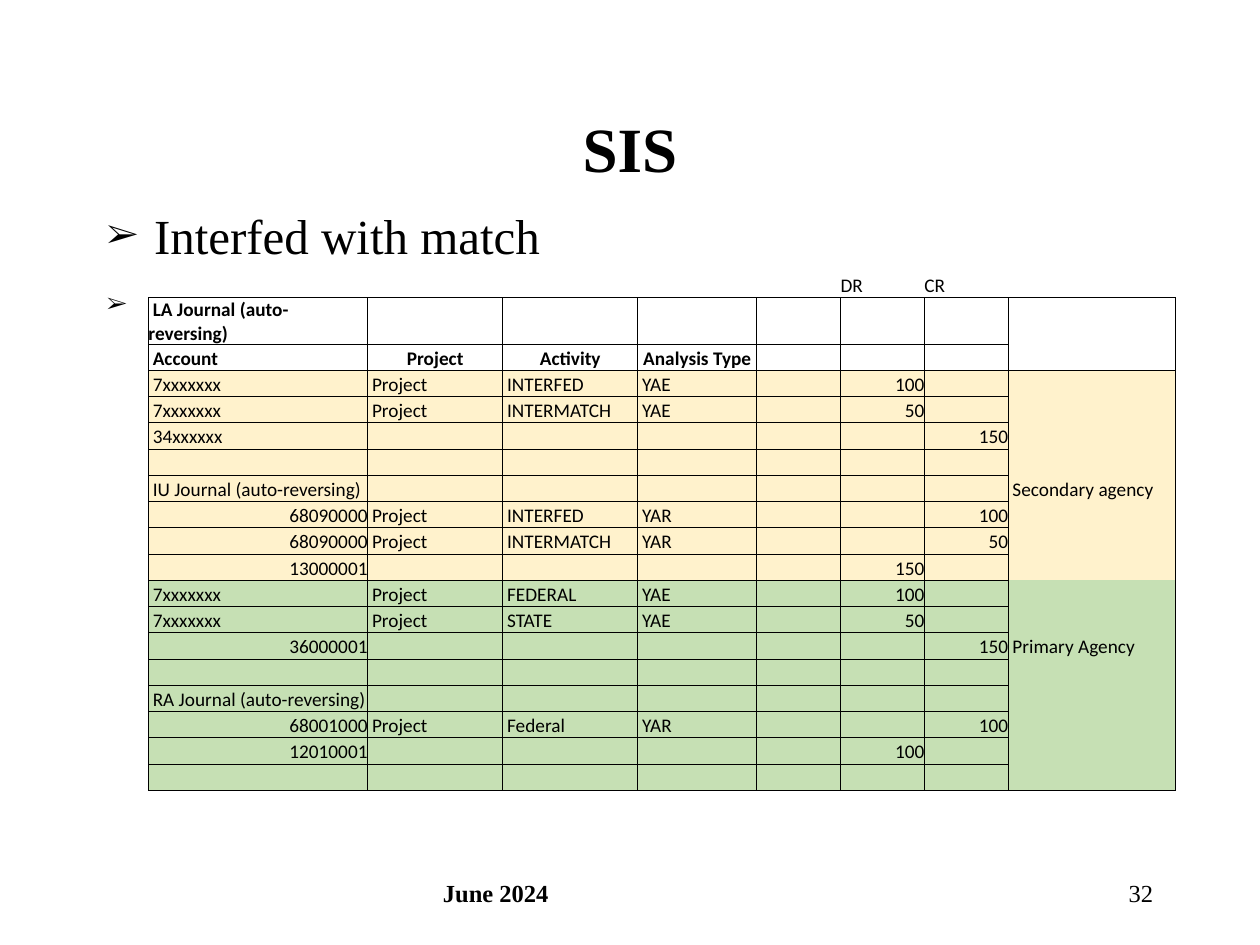
import dataclasses

import lxml.etree
import pptx
import pptx.dml.color
import pptx.enum.text
import pptx.oxml.ns
import pptx.util

Pt = pptx.util.Pt
RGB = pptx.dml.color.RGBColor
qn = pptx.oxml.ns.qn
ALIGN = pptx.enum.text.PP_ALIGN
ANCHOR = pptx.enum.text.MSO_ANCHOR


@dataclasses.dataclass(frozen=True)
class Theme:
    ink: str = "000000"
    secondary: str = "FFF2CC"
    primary: str = "C6E0B4"
    serif: str = "Times New Roman"
    sans: str = "Calibri"
    title: float = 36
    body: float = 28
    spacer: float = 18
    footer: float = 14
    cell: float = 11
    border: float = 0.5


THEME = Theme()

COLUMNS = [125.3, 77.2, 77.2, 68] + [47.9] * 5
ROW_HEIGHT = 15
SIDE = 7
HEADER_ROW = 2
FIRST_SECONDARY, FIRST_PRIMARY = 3, 11
SIDE_LABELS = {7: "Secondary agency", 13: "Primary Agency"}
MERGED_ROWS = (6, 7, 13, 14, 15)

ROWS = [
    ("", "", "", "", "DR", "CR"),
    ("LA Journal (auto-reversing)", "", "", "", "", ""),
    ("Account", "Project", "Activity", "Analysis Type", "", ""),
    ("7xxxxxxx", "Project", "INTERFED", "YAE", "100", ""),
    ("7xxxxxxx", "Project", "INTERMATCH", "YAE", "50", ""),
    ("34xxxxxx", "", "", "", "", "150"),
    ("", "", "", "", "", ""),
    ("IU Journal (auto-reversing)", "", "", "", "", ""),
    ("68090000", "Project", "INTERFED", "YAR", "", "100"),
    ("68090000", "Project", "INTERMATCH", "YAR", "", "50"),
    ("13000001", "", "", "", "150", ""),
    ("7xxxxxxx", "Project", "FEDERAL", "YAE", "100", ""),
    ("7xxxxxxx", "Project", "STATE", "YAE", "50", ""),
    ("36000001", "", "", "", "", "150"),
    ("", "", "", "", "", ""),
    ("RA Journal (auto-reversing)", "", "", "", "", ""),
    ("68001000", "Project", "Federal", "YAR", "", "100"),
    ("12010001", "", "", "", "100", ""),
    ("", "", "", "", "", ""),
]


def write(p, text, size, font=THEME.serif, bold=False, align=ALIGN.LEFT):
    p.alignment = align
    r = p.add_run()
    r.text = text
    r.font.size = Pt(size)
    r.font.name = font
    r.font.bold = bold
    r.font.color.rgb = RGB.from_string(THEME.ink)


def add_box(s, left, top, width, height, anchor=ANCHOR.MIDDLE):
    sp = s.shapes.add_textbox(Pt(left), Pt(top), Pt(width), Pt(height))
    tf = sp.text_frame
    tf.word_wrap = True
    tf.vertical_anchor = anchor
    return tf


def add_bullet(p):
    pPr = p._p.get_or_add_pPr()
    pPr.set("marL", str(Pt(27)))
    pPr.set("indent", str(-Pt(27)))
    clr = lxml.etree.SubElement(pPr, qn("a:buClr"))
    lxml.etree.SubElement(clr, qn("a:srgbClr"), val=THEME.ink)
    lxml.etree.SubElement(pPr, qn("a:buSzPct"), val="70000")
    lxml.etree.SubElement(pPr, qn("a:buFont"), typeface=THEME.serif)
    lxml.etree.SubElement(pPr, qn("a:buChar"), char="➢")


def add_body(s):
    tf = add_box(s, 54, 114, 612, 378, ANCHOR.TOP)
    p = tf.paragraphs[0]
    add_bullet(p)
    write(p, "Interfed with match", THEME.body)
    p = tf.add_paragraph()
    p.space_before = Pt(5.6)
    add_bullet(p)
    write(p, " ", THEME.spacer, font=THEME.sans)
    write(p, " ", THEME.body)


def cell_sides(row, col):
    if row == 0:
        return "B"
    if col < SIDE:
        return "LRTB"
    sides = "L" if col == SIDE else "R"
    if row in MERGED_ROWS:
        sides = "LR"
    if row in (1, FIRST_SECONDARY):
        sides += "T"
    if row in (HEADER_ROW, len(ROWS) - 1):
        sides += "B"
    return sides


def draw_borders(cell, sides):
    tcPr = cell._tc.get_or_add_tcPr()
    for side in "LRTB":
        ln = lxml.etree.SubElement(tcPr, qn(f"a:ln{side}"), w=str(Pt(THEME.border)))
        if side in sides:
            fill = lxml.etree.SubElement(ln, qn("a:solidFill"))
            lxml.etree.SubElement(fill, qn("a:srgbClr"), val=THEME.ink)
        else:
            lxml.etree.SubElement(ln, qn("a:noFill"))


def paint(cell, row):
    if row < FIRST_SECONDARY:
        cell.fill.background()
        return
    cell.fill.solid()
    color = THEME.secondary if row < FIRST_PRIMARY else THEME.primary
    cell.fill.fore_color.rgb = RGB.from_string(color)


def fill_cell(cell, text, row, col):
    cell.margin_left = cell.margin_right = cell.margin_top = cell.margin_bottom = 0
    cell.vertical_anchor = ANCHOR.BOTTOM
    p = cell.text_frame.paragraphs[0]
    if not text:
        p._p.get_or_add_endParaRPr().set("sz", str(int(THEME.cell * 100)))
        return
    align = ALIGN.LEFT
    if text.isdigit():
        align = ALIGN.RIGHT
    elif row == HEADER_ROW and col > 0:
        align = ALIGN.CENTER
    elif row > 0:
        text = " " + text
    write(p, text, THEME.cell, font=THEME.sans, bold=row in (1, HEADER_ROW), align=align)


def add_journal_table(s):
    frame = s.shapes.add_table(len(ROWS), len(COLUMNS), Pt(84.8), Pt(155.2),
                               Pt(sum(COLUMNS)), Pt(ROW_HEIGHT * len(ROWS)))
    table = frame.table
    table.first_row = table.horz_banding = False
    for column, width in zip(table.columns, COLUMNS):
        column.width = Pt(width)
    for row, values in enumerate(ROWS):
        table.rows[row].height = Pt(ROW_HEIGHT)
        texts = [*values[:4], "", *values[4:], SIDE_LABELS.get(row, ""), ""]
        for col, text in enumerate(texts):
            cell = table.cell(row, col)
            draw_borders(cell, cell_sides(row, col))
            paint(cell, row)
            fill_cell(cell, text, row, col)
        if row in MERGED_ROWS:
            table.cell(row, SIDE).merge(table.cell(row, SIDE + 1))


def main():
    prs = pptx.Presentation()
    prs.slide_width, prs.slide_height = Pt(720), Pt(540)
    s = prs.slides.add_slide(prs.slide_layouts[6])
    title = add_box(s, 0, 54, 720, 60)
    write(title.paragraphs[0], "SIS", THEME.title, bold=True, align=ALIGN.CENTER)
    add_body(s)
    date = add_box(s, 246, 492, 228, 36)
    write(date.paragraphs[0], "June 2024", THEME.footer, bold=True)
    number = add_box(s, 516, 492, 150, 36)
    write(number.paragraphs[0], "32", THEME.footer, align=ALIGN.RIGHT)
    add_journal_table(s)
    prs.save("out.pptx")


if __name__ == "__main__":
    main()
